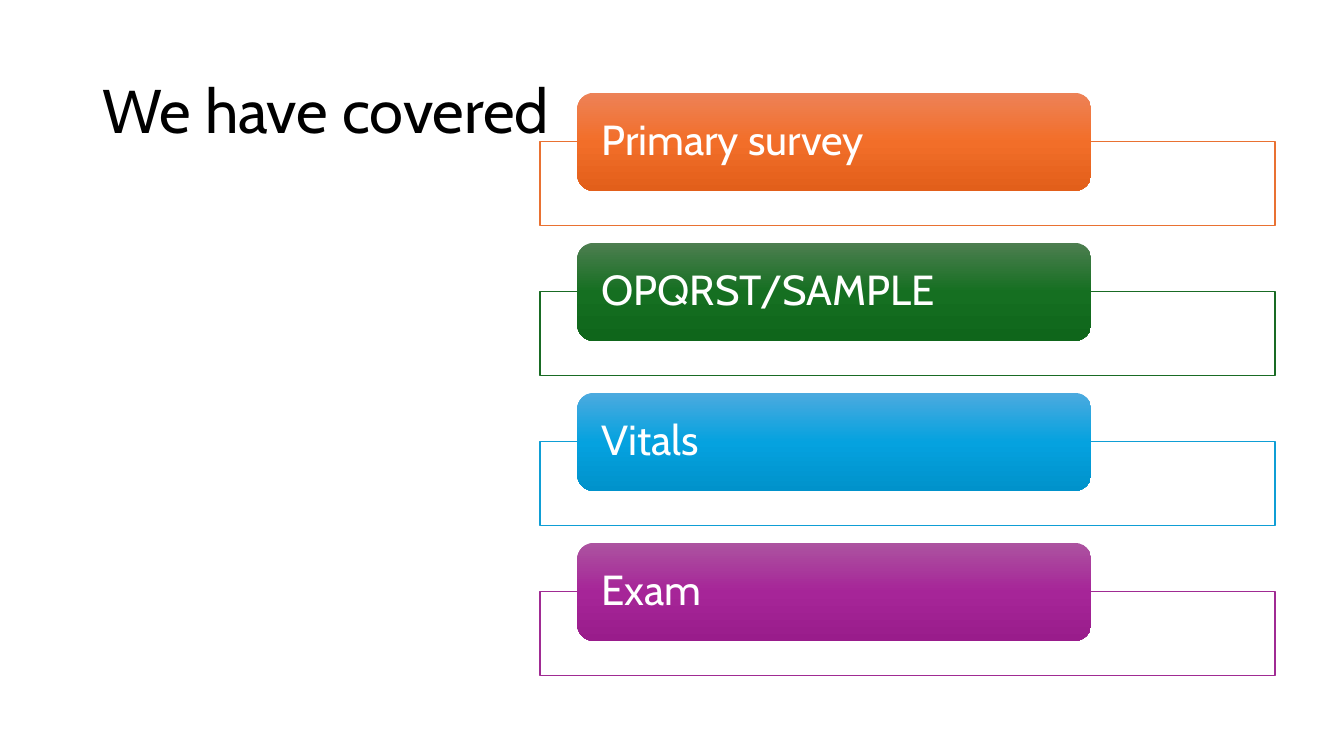
from copy import deepcopy
from dataclasses import dataclass

from lxml.etree import SubElement
from pptx import Presentation
from pptx.dml.color import RGBColor as Rgb
from pptx.enum.shapes import MSO_SHAPE as Preset
from pptx.enum.text import MSO_ANCHOR as Anchor, PP_ALIGN as Align
from pptx.oxml.ns import qn
from pptx.shapes.autoshape import Shape
from pptx.slide import Slide
from pptx.text.text import TextFrame
from pptx.util import Cm, Pt


@dataclass(frozen=True)
class Theme:
    font: str = "Cabin"
    title_size: int = 44
    topic_size: int = 30
    ink: str = "000000"
    paper: str = "FFFFFF"
    frame_opacity: int = 90


@dataclass(frozen=True)
class Topic:
    label: str
    outline: str
    gradient: tuple[str, str, str]  # top, middle, bottom


THEME = Theme()
TOPICS = [
    Topic("Primary survey", "E97132", ("ED8257", "F26E29", "E25F1A")),
    Topic("OPQRST/SAMPLE", "196B24", ("4D7E50", "156F21", "0F661B")),
    Topic("Vitals", "0F9ED5", ("4CAADF", "05A2DF", "0092CB")),
    Topic("Exam", "A02B93", ("AC53A0", "A62598", "991C8B")),
]
TOPIC_PITCH = 3.78  # cm from one topic to the next


def write(frame: TextFrame, text: str, size: int, color: str) -> None:
    frame.word_wrap = True
    frame.vertical_anchor = Anchor.MIDDLE
    paragraph = frame.paragraphs[0]
    paragraph.alignment = Align.LEFT
    paragraph.line_spacing = 0.9
    run = paragraph.add_run()
    run.text = text
    run.font.name = THEME.font
    run.font.size = Pt(size)
    run.font.color.rgb = Rgb.from_string(color)


def fill_gradient(shape: Shape, colors: tuple[str, str, str]) -> None:
    shape.fill.gradient()
    shape.fill.gradient_angle = 270
    # The default gradient has two stops, so a middle one is added
    stops = shape.fill._fill._gradFill.find(qn("a:gsLst"))
    stops.insert(1, deepcopy(stops[0]))
    for index, (stop, color) in enumerate(zip(shape.fill.gradient_stops, colors)):
        stop.position = index / (len(colors) - 1)
        stop.color.rgb = Rgb.from_string(color)


def draw_topic(slide: Slide, topic: Topic, offset: float) -> None:
    # Outlined frame behind the label
    frame = slide.shapes.add_shape(
        Preset.RECTANGLE, Cm(13.61), Cm(3.56 + offset), Cm(18.52), Cm(2.12))
    frame.shadow.inherit = False
    frame.fill.solid()
    frame.fill.fore_color.rgb = Rgb.from_string(THEME.paper)
    paper = frame._element.spPr.find(f"{qn('a:solidFill')}/{qn('a:srgbClr')}")
    SubElement(paper, qn("a:alpha"), val=str(THEME.frame_opacity * 1000))
    frame.line.color.rgb = Rgb.from_string(topic.outline)
    frame.line.width = Pt(1)

    # Rounded label
    label = slide.shapes.add_shape(
        Preset.ROUNDED_RECTANGLE, Cm(14.55), Cm(2.34 + offset), Cm(12.95), Cm(2.47))
    label.shadow.inherit = False
    label.line.fill.background()
    fill_gradient(label, topic.gradient)
    text = label.text_frame
    text.margin_left = text.margin_right = Cm(0.49)
    text.margin_top = text.margin_bottom = 0
    write(text, topic.label, THEME.topic_size, THEME.paper)


def main() -> None:
    deck = Presentation()
    deck.slide_width, deck.slide_height = Cm(33.87), Cm(19.05)
    slide = deck.slides.add_slide(deck.slide_layouts[6])

    # Title
    title = slide.shapes.add_textbox(Cm(2.33), Cm(1.01), Cm(29.21), Cm(3.68))
    write(title.text_frame, "We have covered", THEME.title_size, THEME.ink)

    # Topics covered, from top to bottom
    for row, topic in enumerate(TOPICS):
        draw_topic(slide, topic, row * TOPIC_PITCH)

    deck.save("out.pptx")


if __name__ == "__main__":
    main()
